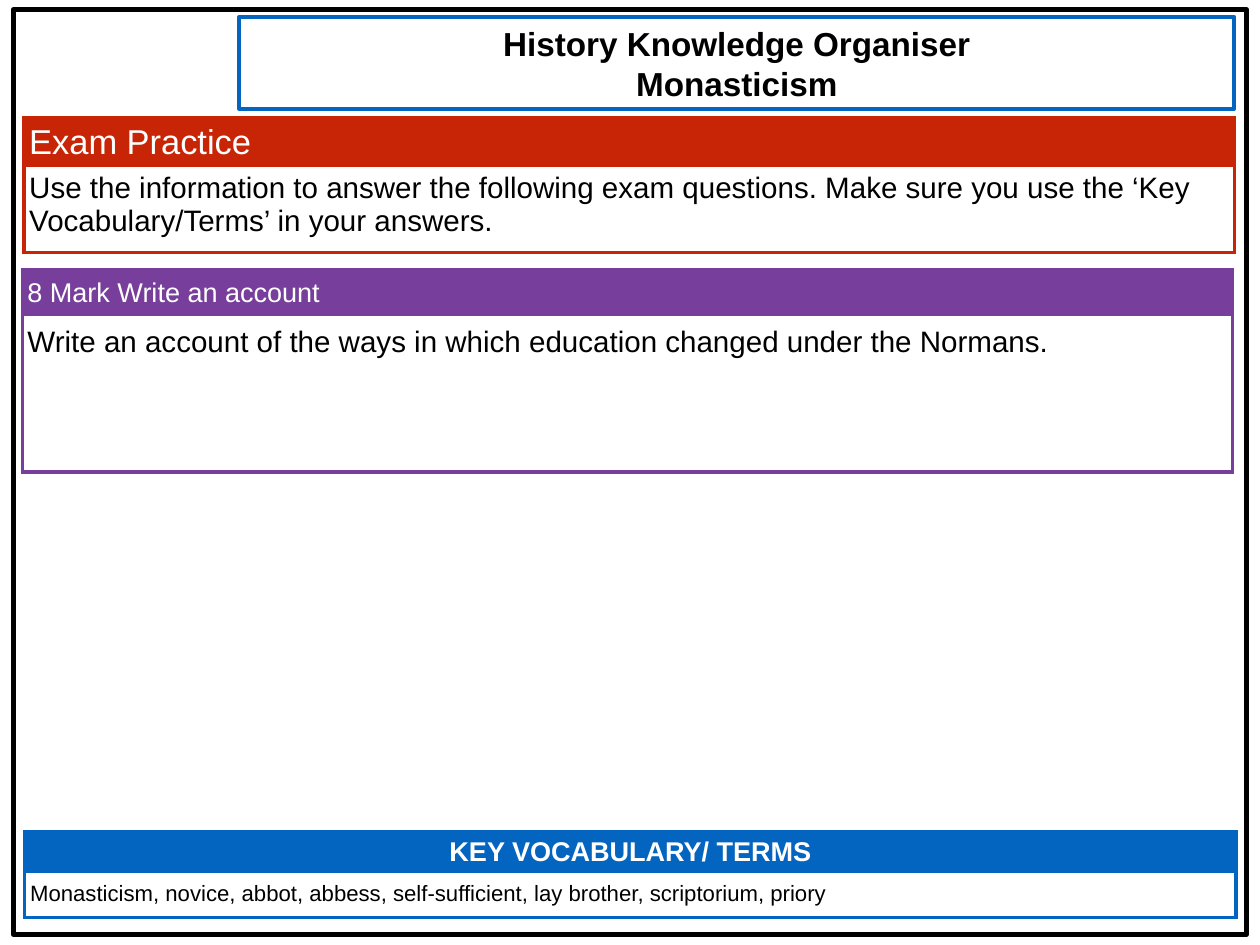
from lxml.etree import SubElement
from pptx import Presentation
from pptx.dml.color import RGBColor
from pptx.enum.shapes import MSO_SHAPE
from pptx.enum.text import MSO_ANCHOR, PP_ALIGN
from pptx.oxml.ns import qn
from pptx.util import Inches, Pt

COLORS = {"black": "000000", "white": "FFFFFF", "blue": "0365C0",
          "red": "C82506", "purple": "773F9B"}
INSET = Inches(0.06)


def write_text(frame, text, size, color="black", bold=False,
               align=PP_ALIGN.LEFT, spacing=None, before=None):
    """Write one paragraph per line of text."""
    frame.word_wrap = True
    for index, line in enumerate(text.split("\n")):
        para = frame.paragraphs[0] if index == 0 else frame.add_paragraph()
        para.alignment = align
        para.line_spacing = spacing
        para.space_before = before
        span = para.add_run()
        span.text = line
        span.font.name = "Arial"
        span.font.size = Pt(size)
        span.font.bold = bold
        span.font.color.rgb = RGBColor.from_string(COLORS[color])


def set_borders(cell, color, widths):
    """Set border widths in points, in the order left, right, top, bottom."""
    properties = cell._tc.get_or_add_tcPr()
    for side, width in zip("LRTB", widths):
        line = SubElement(properties, qn(f"a:ln{side}"), w=str(Pt(width)))
        fill = SubElement(line, qn("a:solidFill"))
        SubElement(fill, qn("a:srgbClr"), val=COLORS[color])


deck = Presentation()
deck.slide_width = Inches(14.22)
deck.slide_height = Inches(10.67)
page = deck.slides.add_slide(deck.slide_layouts[6])

# Page frame and title box
boxes = [
    ((0.15, 0.11, 13.92, 10.44), "black", 4, ""),
    ((2.7, 0.19, 11.23, 1.04), "blue", 3, "History Knowledge Organiser\nMonasticism"),
]
for place, color, width, text in boxes:
    box = page.shapes.add_shape(MSO_SHAPE.RECTANGLE, *map(Inches, place))
    box.shadow.inherit = False
    box.fill.background()
    box.line.color.rgb = RGBColor.from_string(COLORS[color])
    box.line.width = Pt(width)
    if text:
        frame = box.text_frame
        frame.margin_left = frame.margin_right = INSET
        frame.margin_top = frame.margin_bottom = INSET
        frame.vertical_anchor = MSO_ANCHOR.MIDDLE
        write_text(frame, text, 27, bold=True, align=PP_ALIGN.CENTER)

# Sections: place, row heights, color, heading and body with their formats
sections = [
    ((0.28, 9.39, 13.67), (0.45, 0.51), "blue",
     ("KEY VOCABULARY/ TERMS", dict(size=22, bold=True, align=PP_ALIGN.CENTER)),
     ("Monasticism, novice, abbot, abbess, self-sufficient, lay brother, scriptorium, priory",
      dict(size=18, spacing=1.15, before=Pt(8)))),
    ((0.27, 1.33, 13.66), (0.48, 0.97), "red",
     ("Exam Practice", dict(size=28)),
     ("Use the information to answer the following exam questions. "
      "Make sure you use the ‘Key Vocabulary/Terms’ in your answers.", dict(size=24))),
    ((0.25, 3.05, 13.66), (0.51, 1.77), "purple",
     ("8 Mark Write an account", dict(size=22)),
     ("Write an account of the ways in which education changed under the Normans.",
      dict(size=24, spacing=1.15))),
]
for (left, top, width), heights, color, heading, body in sections:
    table = page.shapes.add_table(2, 1, Inches(left), Inches(top), Inches(width),
                                  Inches(sum(heights))).table
    rows = [
        (heading, "white", color, MSO_ANCHOR.MIDDLE, (3, 3, 3, 0.75)),
        (body, "black", "white", MSO_ANCHOR.TOP, (3, 3, 0.75, 3)),
    ]
    for index, ((text, style), ink, fill, anchor, borders) in enumerate(rows):
        table.rows[index].height = Inches(heights[index])
        cell = table.cell(index, 0)
        cell.margin_left = cell.margin_right = INSET
        cell.margin_top = cell.margin_bottom = INSET
        cell.vertical_anchor = anchor
        set_borders(cell, color, borders)
        cell.fill.solid()
        cell.fill.fore_color.rgb = RGBColor.from_string(COLORS[fill])
        write_text(cell.text_frame, text, color=ink, **style)

deck.save("out.pptx")
